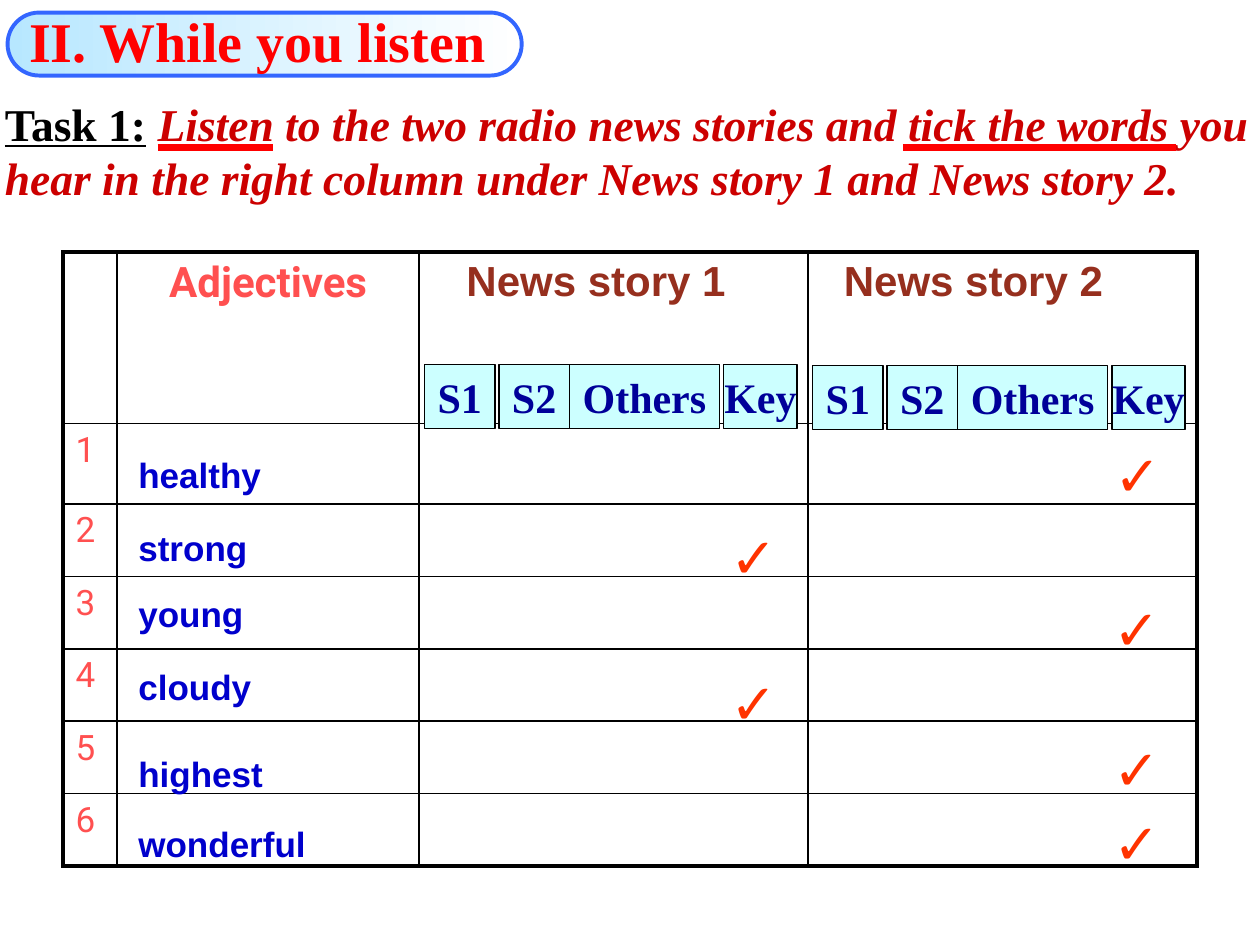
from dataclasses import dataclass
from lxml.etree import SubElement
from pptx import Presentation
from pptx.dml.color import RGBColor
from pptx.enum.shapes import MSO_CONNECTOR, MSO_SHAPE
from pptx.enum.text import MSO_ANCHOR, PP_ALIGN
from pptx.oxml.ns import qn
from pptx.util import Pt


@dataclass(frozen=True)
class Theme:
    serif: str = "Times New Roman"
    sans: str = "Arial"
    round: str = "Roboto"
    black: str = "000000"
    white: str = "FFFFFF"
    sky: str = "B7E7FF"
    aqua: str = "CCFFFF"
    blue: str = "3366FF"
    navy: str = "000099"
    word: str = "0000CC"
    red: str = "FF0000"
    dark: str = "CC0000"
    brown: str = "962F1E"
    coral: str = "FF5050"
    tick: str = "FF3300"
    title: int = 32
    task: int = 26
    head: int = 24
    body: int = 20


T = Theme()
LEFT, TOP = 36, 144
COLS = [31, 172.6, 222.2, 222.2]
ROWS = [98, 46] + [41.4] * 5
WORDS = [("healthy", 255.6), ("strong", 297.4), ("young", 334.8),
         ("cloudy", 376.6), ("highest", 426.2), ("wonderful", 466.6)]
TICKS = [(630, 248.4), (410.4, 295.2), (629.3, 336.2),
         (410.4, 378.7), (629.3, 416.2), (629.3, 458.6)]
# label, offset from the group's left, width, side inset
CHIPS = [("S1", 0, 40.3, 7.2), ("S2", 42.5, 40.3, 7.2),
         ("Others", 82.8, 85.7, 7.2), ("Key", 171, 41.8, 0)]


def rgb(code):
    return RGBColor.from_string(code)


def write(par, text, font=T.sans, size=T.body, color=T.black, bold=True,
          italic=False, under=False, align=None):
    run = par.add_run()
    run.text = text
    face = run.font
    face.name, face.size = font, Pt(size)
    face.bold, face.italic, face.underline = bold, italic, under
    face.color.rgb = rgb(color)
    if align is not None:
        par.alignment = align


def add_text(slide, left, top, width, height):
    """Add a wrapping text box and return its first paragraph."""
    box = slide.shapes.add_textbox(Pt(left), Pt(top), Pt(width), Pt(height))
    box.text_frame.word_wrap = True
    return box.text_frame.paragraphs[0]


def add_box(slide, kind, left, top, width, height, line, weight):
    box = slide.shapes.add_shape(kind, Pt(left), Pt(top), Pt(width), Pt(height))
    box.shadow.inherit = False
    box.line.color.rgb = rgb(line)
    box.line.width = Pt(weight)
    box.text_frame.vertical_anchor = MSO_ANCHOR.MIDDLE
    return box


def add_title(slide):
    box = add_box(slide, MSO_SHAPE.ROUNDED_RECTANGLE, 4.3, 7.2, 293.8, 36,
                  T.blue, 2.25)
    box.adjustments[0] = 0.5
    box.fill.gradient()
    box.fill.gradient_angle = 0
    for stop, color in zip(box.fill.gradient_stops, (T.sky, T.white)):
        stop.color.rgb = rgb(color)
    par = box.text_frame.paragraphs[0]
    par.line_spacing = 0.9
    write(par, "II. While you listen", font=T.serif, size=T.title,
          color=T.red, align=PP_ALIGN.LEFT)


def add_task(slide):
    par = add_text(slide, -4.3, 51.1, 732.2, 69.8)
    look = dict(font=T.serif, size=T.task)
    write(par, "Task 1:", under=True, **look)
    write(par, " ", color=T.dark, bold=False, **look)
    write(par, "Listen to the two radio news stories and tick the words you "
          "hear in the right column under News story 1 and News story 2.",
          color=T.dark, italic=True, **look)


def add_chips(slide, left, top):
    for label, shift, width, inset in CHIPS:
        chip = add_box(slide, MSO_SHAPE.RECTANGLE, left + shift, top, width,
                       36.7, T.black, 0.75)
        chip.fill.solid()
        chip.fill.fore_color.rgb = rgb(T.aqua)
        frame = chip.text_frame
        frame.word_wrap = False
        frame.margin_left = frame.margin_right = Pt(inset)
        write(frame.paragraphs[0], label, font=T.serif, size=T.head,
              color=T.navy, align=PP_ALIGN.CENTER)


def set_edges(cell, row, col):
    """Draw thin inner edges and a thick outer frame."""
    outer = {"L": col == 0, "R": col == len(COLS) - 1,
             "T": row == 0, "B": row == len(ROWS) - 1}
    props = cell._tc.get_or_add_tcPr()
    for side, thick in outer.items():
        width = Pt(2.25 if thick else 1)
        edge = SubElement(props, qn("a:ln" + side), w=str(width))
        fill = SubElement(edge, qn("a:solidFill"))
        SubElement(fill, qn("a:srgbClr"), val=T.black)


def add_grid(slide):
    table = slide.shapes.add_table(
        len(ROWS), len(COLS), Pt(LEFT), Pt(TOP), Pt(sum(COLS)),
        Pt(sum(ROWS))).table
    table.first_row = table.horz_banding = False
    for col, width in zip(table.columns, COLS):
        col.width = Pt(width)
    for row, height in zip(table.rows, ROWS):
        row.height = Pt(height)
    for r in range(len(ROWS)):
        for c in range(len(COLS)):
            cell = table.cell(r, c)
            set_edges(cell, r, c)
            cell.fill.background()
    write(table.cell(0, 1).text_frame.paragraphs[0], "Adjectives",
          font=T.round, size=T.head, color=T.coral, align=PP_ALIGN.CENTER)
    for num, inset in ((1, 27), (2, 20.5)):
        cell = table.cell(0, num + 1)
        cell.margin_left = Pt(inset)
        write(cell.text_frame.paragraphs[0], f"News story {num}",
              size=T.head, color=T.brown)
    for num in range(1, len(ROWS)):
        write(table.cell(num, 0).text_frame.paragraphs[0], str(num),
              font=T.round, color=T.coral, bold=False)


def add_rule(slide, start, end, top):
    rule = slide.shapes.add_connector(MSO_CONNECTOR.STRAIGHT, Pt(start),
                                      Pt(top), Pt(end), Pt(top))
    rule.line.color.rgb = rgb(T.red)
    rule.line.width = Pt(4)
    SubElement(rule._element.spPr, qn("a:effectLst"))


def main():
    deck = Presentation()
    deck.slide_width, deck.slide_height = Pt(720), Pt(540)
    slide = deck.slides.add_slide(deck.slide_layouts[6])
    add_task(slide)
    add_grid(slide)
    for left, top in TICKS:
        write(add_text(slide, left, top, 41.8, 45.4), "✓", size=T.title,
              color=T.tick)
    add_chips(slide, 464.4, 208.8)
    add_chips(slide, 242.6, 208.1)
    add_title(slide)
    for word, top in WORDS:
        write(add_text(slide, 72, top, 160, 31), word, color=T.word)
    for start, end in ((90, 156), (516, 672)):
        add_rule(slide, start, end, 84.2)
    deck.save("out.pptx")


if __name__ == "__main__":
    main()
